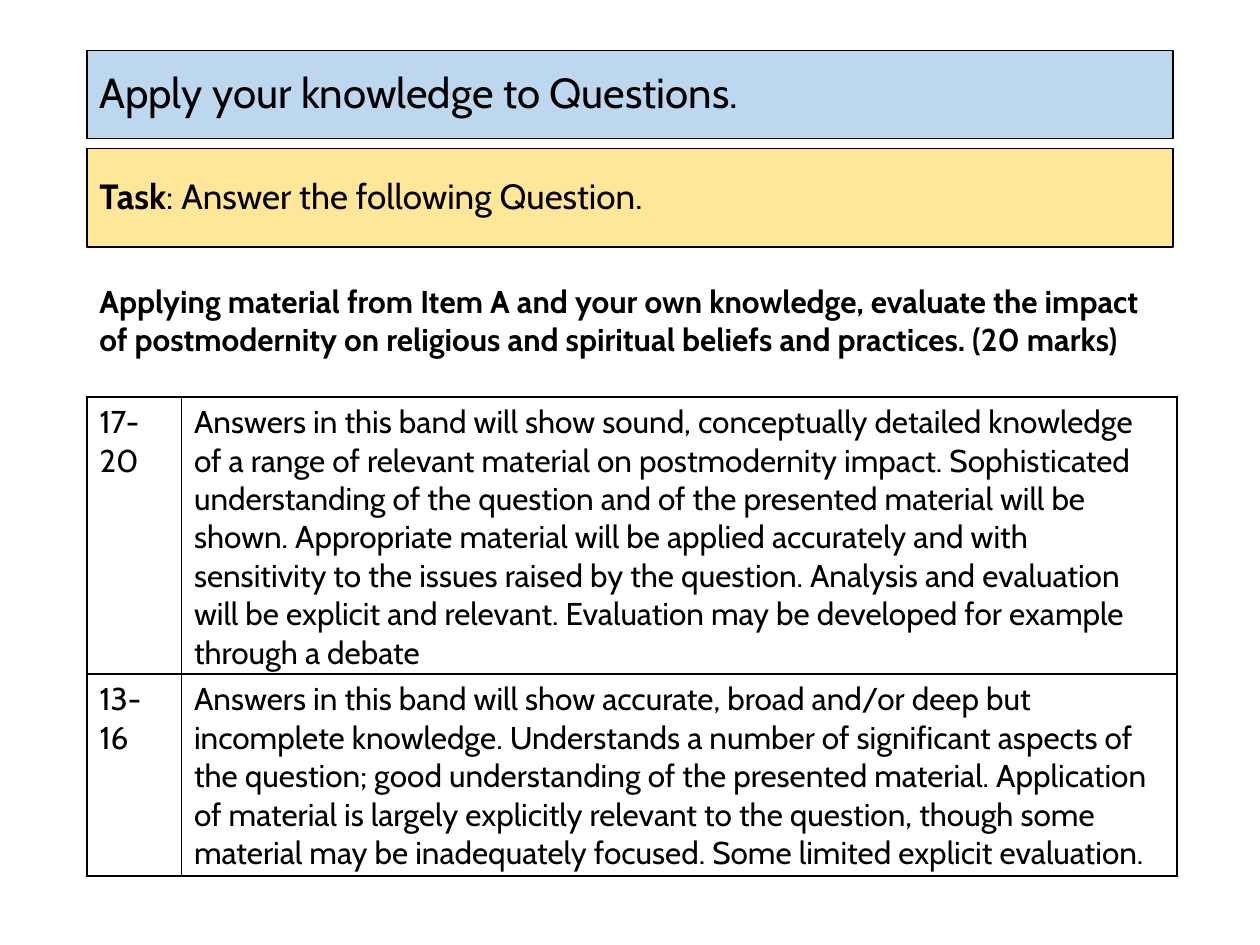
from lxml.etree import SubElement
from pptx import Presentation
from pptx.dml.color import RGBColor
from pptx.enum.shapes import MSO_SHAPE as Shape
from pptx.enum.text import MSO_ANCHOR as Anchor, PP_ALIGN as Align
from pptx.oxml.ns import qn
from pptx.util import Pt

BLACK = RGBColor(0x00, 0x00, 0x00)
BLUE = RGBColor(0xBD, 0xD7, 0xEE)
YELLOW = RGBColor(0xFF, 0xE6, 0x99)
FONT = "Cabin"
LEFT = Pt(49.7)
WIDTH = Pt(620.6)
COLUMN_WIDTHS = (54, 568.8)
ROW_HEIGHTS = (158.4, 115.2)

QUESTION = (
    "Applying material from Item A and your own knowledge, evaluate the impact "
    "of postmodernity on religious and spiritual beliefs and practices. (20 marks)"
)
MARK_BANDS = (
    ("17-20",
     "Answers in this band will show sound, conceptually detailed knowledge of a "
     "range of relevant material on postmodernity impact. Sophisticated "
     "understanding of the question and of the presented material will be shown. "
     "Appropriate material will be applied accurately and with sensitivity to the "
     "issues raised by the question. Analysis and evaluation will be explicit and "
     "relevant. Evaluation may be developed for example through a debate"),
    ("13-16",
     "Answers in this band will show accurate, broad and/or deep but incomplete "
     "knowledge. Understands a number of significant aspects of the question; good "
     "understanding of the presented material. Application of material is largely "
     "explicitly relevant to the question, though some material may be inadequately "
     "focused. Some limited explicit evaluation."),
)


def write(frame, spans, size):
    frame.word_wrap = True
    para = frame.paragraphs[0]
    para.alignment = Align.LEFT
    para.font.name = FONT
    para.font.size = Pt(size)
    para.font.color.rgb = BLACK
    for text, bold in spans:
        span = para.add_run()
        span.text = text
        if bold:
            span.font.bold = True
    return para


def add_banner(page, top, height, fill, spans, size):
    box = page.shapes.add_shape(Shape.RECTANGLE, LEFT, Pt(top), WIDTH, Pt(height))
    box.shadow.inherit = False
    box.fill.solid()
    box.fill.fore_color.rgb = fill
    box.line.color.rgb = BLACK
    box.line.width = Pt(0.75)
    box.text_frame.vertical_anchor = Anchor.MIDDLE
    write(box.text_frame, spans, size).line_spacing = 0.9


def add_question(page):
    box = page.shapes.add_textbox(LEFT, Pt(157.7), WIDTH, Pt(94.3))
    write(box.text_frame, [(QUESTION, True)], 18)


def outline_cell(cell):
    properties = cell._tc.get_or_add_tcPr()
    for side in ("a:lnL", "a:lnR", "a:lnT", "a:lnB"):
        line = SubElement(properties, qn(side), w=str(Pt(1)))
        fill = SubElement(line, qn("a:solidFill"))
        SubElement(fill, qn("a:srgbClr"), val=str(BLACK))


def add_mark_bands(page):
    table = page.shapes.add_table(
        len(MARK_BANDS), len(COLUMN_WIDTHS), LEFT, Pt(226.8),
        Pt(sum(COLUMN_WIDTHS)), Pt(sum(ROW_HEIGHTS)),
    ).table
    table.first_row = False
    table.horz_banding = False
    for column, width in zip(table.columns, COLUMN_WIDTHS):
        column.width = Pt(width)
    for row, height, band in zip(table.rows, ROW_HEIGHTS, MARK_BANDS):
        row.height = Pt(height)
        for cell, text in zip(row.cells, band):
            outline_cell(cell)
            cell.fill.background()
            write(cell.text_frame, [(text, False)], 18)


def main():
    deck = Presentation()
    deck.slide_width, deck.slide_height = Pt(720), Pt(540)
    page = deck.slides.add_slide(deck.slide_layouts[6])
    add_banner(page, 28.8, 50.4, BLUE,
               [("Apply your knowledge to Questions.", False)], 24)
    add_banner(page, 85, 56.2, YELLOW,
               [("Task", True), (": Answer the following Question.", False)], 20)
    add_question(page)
    add_mark_bands(page)
    deck.save("out.pptx")


if __name__ == "__main__":
    main()
